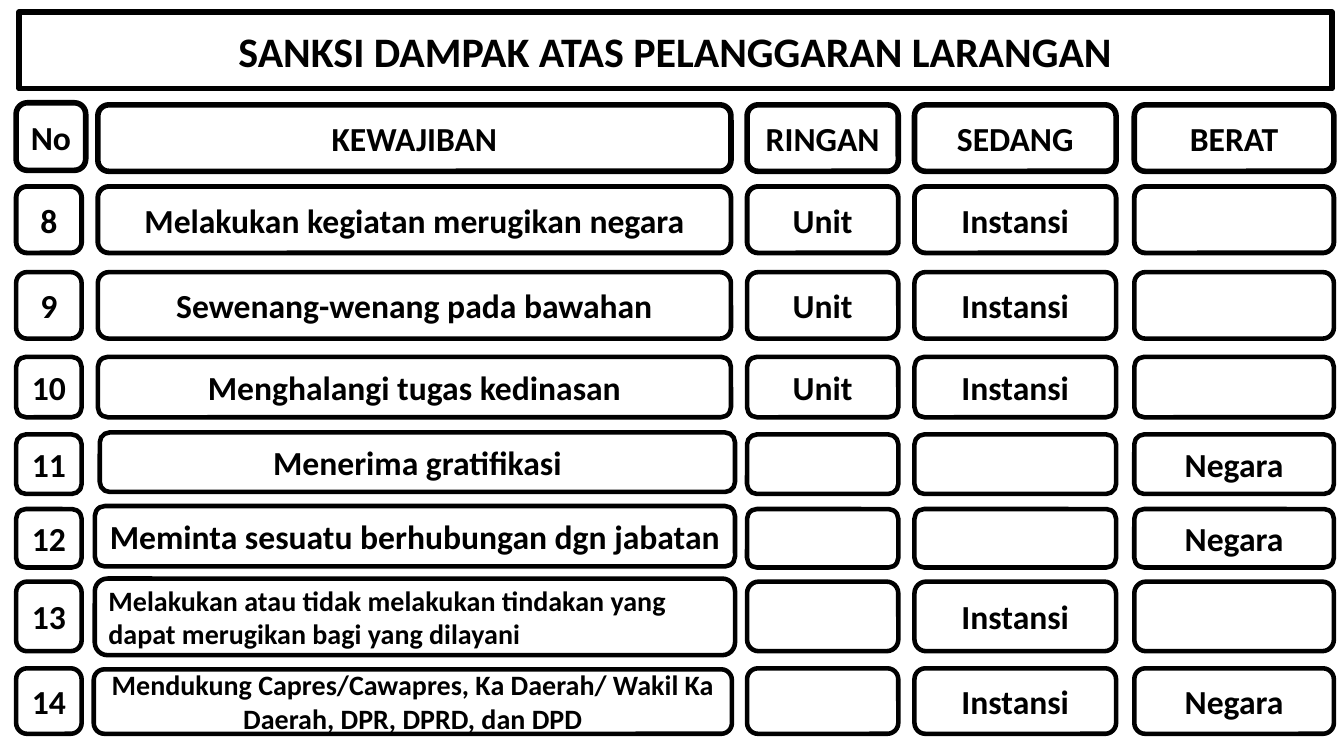
import pptx
import pptx.dml.color
import pptx.enum.shapes
import pptx.enum.text
import pptx.util
from lxml import etree
from pptx.oxml.ns import qn
from pptx.util import Inches

INK = "000000"
CENTER = pptx.enum.text.PP_ALIGN.CENTER
LEFT = pptx.enum.text.PP_ALIGN.LEFT


def color(hex_text):
    return pptx.dml.color.RGBColor.from_string(hex_text)


def format_box(box, text, size, line_width, align=CENTER):
    """Give a box its black outline and, if there is any, its bold text."""
    box.fill.background()
    box.line.color.rgb = color(INK)
    box.line.width = pptx.util.Pt(line_width)
    if not text:
        return
    frame = box.text_frame
    frame_format = {
        "word_wrap": True,
        "auto_size": pptx.enum.text.MSO_AUTO_SIZE.NONE,
        "vertical_anchor": pptx.enum.text.MSO_ANCHOR.MIDDLE,
    }
    for name, value in frame_format.items():
        setattr(frame, name, value)
    para = frame.paragraphs[0]
    para.alignment = align
    span = para.add_run()
    span.text = text
    span.font.color.rgb = color(INK)
    font_format = {"name": "Calibri", "size": pptx.util.Pt(size), "bold": True}
    for name, value in font_format.items():
        setattr(span.font, name, value)


deck = pptx.Presentation()
deck.slide_width = Inches(13.33)
deck.slide_height = Inches(7.5)
page = deck.slides.add_slide(deck.slide_layouts[5])

# Title in a rounded frame
title = page.shapes.title
title_place = {"left": 0.19, "top": 0.12, "width": 13.02, "height": 0.76}
for name, value in title_place.items():
    setattr(title, name, Inches(value))
geometry = etree.SubElement(title._element.spPr, qn("a:prstGeom"), prst="roundRect")
etree.SubElement(geometry, qn("a:avLst"))
format_box(title, "SANKSI DAMPAK ATAS PELANGGARAN LARANGAN", 30, 4)

# Left and width of the columns: number, obligation, light, medium, severe
columns = [(0.16, 0.65), (0.97, 6.28), (7.41, 1.5), (9.07, 2), (11.25, 1.98)]

# Top and height of each row, then its five texts
rows = [
    (1.04, 0.66, ["No", "KEWAJIBAN", "RINGAN", "SEDANG", "BERAT"]),
    (1.85, 0.66, ["8", "Melakukan kegiatan merugikan negara", "Unit", "Instansi", ""]),
    (2.7, 0.66, ["9", "Sewenang-wenang pada bawahan", "Unit", "Instansi", ""]),
    (3.54, 0.6, ["10", "Menghalangi tugas kedinasan", "Unit", "Instansi", ""]),
    (4.31, 0.59, ["11", "Menerima gratifikasi", "", "", "Negara"]),
    (5.05, 0.58, ["12", "Meminta sesuatu berhubungan dgn jabatan", "", "", "Negara"]),
    (5.77, 0.69, ["13", "Melakukan atau tidak melakukan tindakan yang dapat "
                  "merugikan bagi yang dilayani", "", "Instansi", ""]),
    (6.63, 0.65, ["14", "Mendukung Capres/Cawapres, Ka Daerah/ Wakil Ka Daerah, "
                  "DPR, DPRD, dan DPD", "", "Instansi", "Negara"]),
]

# Boxes that depart from the grid, by row and column
special_places = {
    (0, 0): (0.16, 1.02, 0.69, 0.67),
    (4, 1): (0.99, 4.29, 6.3, 0.59),
    (5, 1): (0.94, 5.02, 6.35, 0.6),
    (6, 1): (0.94, 5.74, 6.35, 0.76),
    (7, 1): (0.93, 6.64, 6.33, 0.64),
}
line_widths = {0: 4, 1: 3.5}

for row, (top, height, texts) in enumerate(rows):
    for column, ((left, width), text) in enumerate(zip(columns, texts)):
        place = special_places.get((row, column), (left, top, width, height))
        box = page.shapes.add_shape(
            pptx.enum.shapes.MSO_SHAPE.ROUNDED_RECTANGLE,
            *[Inches(value) for value in place])
        box.shadow.inherit = False
        is_long = len(text) > 60
        align = LEFT if (row, column) == (6, 1) else CENTER
        format_box(box, text, 20 if is_long else 24, line_widths.get(row, 3.25), align)

deck.save("out.pptx")
